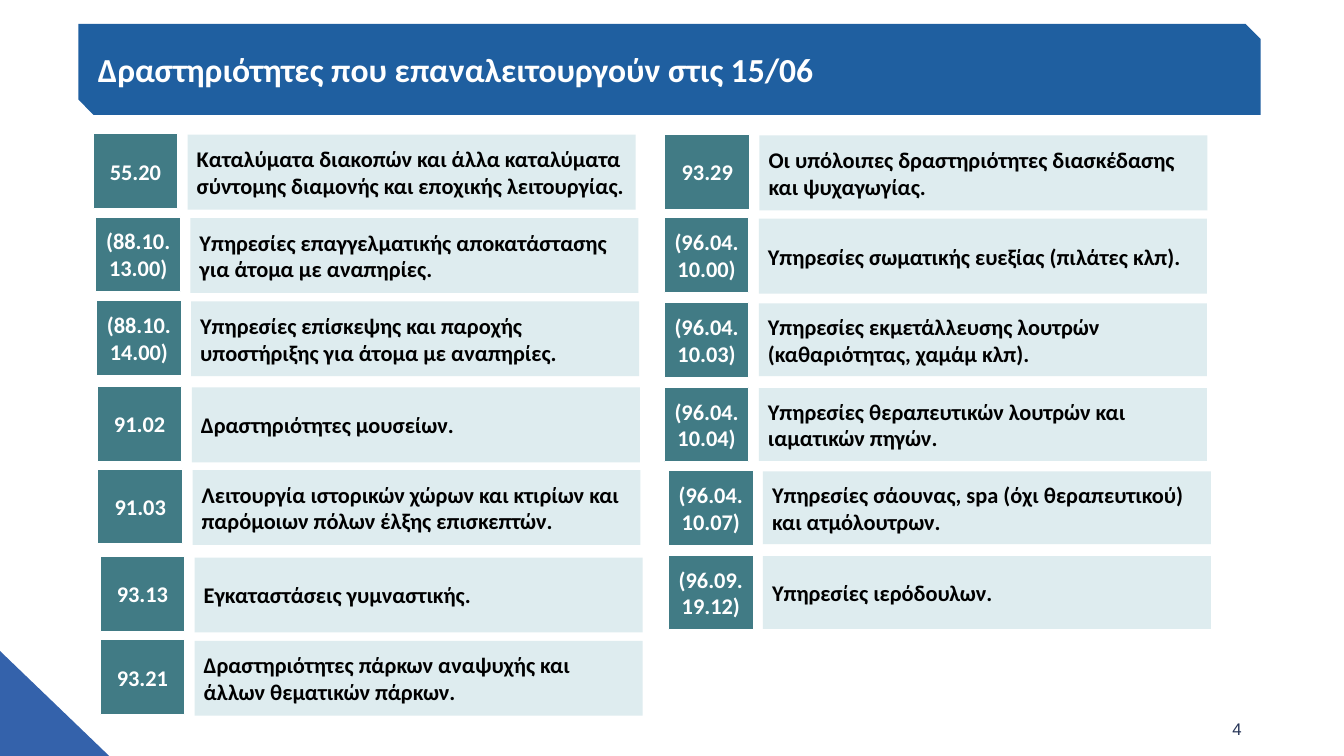
from pptx import Presentation
from pptx.dml.color import RGBColor
from pptx.enum.shapes import MSO_SHAPE as SHAPE
from pptx.enum.text import MSO_ANCHOR as ANCHOR, PP_ALIGN as ALIGN
from pptx.util import Pt


def color(value):
    return RGBColor.from_string(value)


def add_box(kind, box, fill, text="", size=16, ink="FFFFFF", align=ALIGN.LEFT, insets=(0, 0)):
    shape = slide.shapes.add_shape(kind, *[Pt(length) for length in box])
    shape.shadow.inherit = False
    shape.fill.solid()
    shape.fill.fore_color.rgb = color(fill)
    shape.line.fill.background()
    if text:
        frame = shape.text_frame
        frame.word_wrap = True
        frame.vertical_anchor = ANCHOR.MIDDLE
        frame.margin_left = frame.margin_right = Pt(insets[0])
        frame.margin_top = frame.margin_bottom = Pt(insets[1])
        paragraph = frame.paragraphs[0]
        paragraph.text = text
        paragraph.alignment = align
        paragraph.font.name = "Calibri"
        paragraph.font.size = Pt(size)
        paragraph.font.bold = True
        paragraph.font.color.rgb = color(ink)
    return shape


presentation = Presentation()
presentation.slide_width = Pt(960)
presentation.slide_height = Pt(540)
slide = presentation.slides.add_slide(presentation.slide_layouts[6])

# Corner decoration and title banner
add_box(SHAPE.RIGHT_TRIANGLE, (0, 465, 78, 75), "3462AB")
add_box(SHAPE.SNIP_2_DIAG_RECTANGLE, (56, 17, 844.5, 65), "1F5FA0",
        "Δραστηριότητες που επαναλειτουργούν στις 15/06", size=24, insets=(8.5, 1.5))

# Slide number
number_box = slide.shapes.add_textbox(Pt(678), Pt(506), Pt(216), Pt(29))
number_box.text_frame.word_wrap = True
number_box.text_frame.vertical_anchor = ANCHOR.MIDDLE
paragraph = number_box.text_frame.paragraphs[0]
paragraph.text = "4"
paragraph.alignment = ALIGN.RIGHT
paragraph.font.name = "Arial"
paragraph.font.size = Pt(12)
paragraph.font.color.rgb = color("253356")

# Activities: left and top of the code box, description height, code, description
LEFT_HEIGHT, RIGHT_HEIGHT = 53.5, 52
activities = [
    (66.5, 95.5, LEFT_HEIGHT, "55.20",
     "Καταλύματα διακοπών και άλλα καταλύματα σύντομης διαμονής και εποχικής λειτουργίας."),
    (68.5, 155, LEFT_HEIGHT, "(88.10. 13.00)",
     "Υπηρεσίες επαγγελματικής αποκατάστασης για άτομα με αναπηρίες."),
    (69, 214.5, LEFT_HEIGHT, "(88.10. 14.00)",
     "Υπηρεσίες επίσκεψης και παροχής υποστήριξης για άτομα με αναπηρίες."),
    (69.5, 276, LEFT_HEIGHT, "91.02", "Δραστηριότητες μουσείων."),
    (70, 335, LEFT_HEIGHT, "91.03",
     "Λειτουργία ιστορικών χώρων και κτιρίων και παρόμοιων πόλων έλξης επισκεπτών."),
    (71.5, 397.5, LEFT_HEIGHT, "93.13", "Εγκαταστάσεις γυμναστικής."),
    (71.5, 457, LEFT_HEIGHT, "93.21",
     "Δραστηριότητες πάρκων αναψυχής και άλλων θεματικών πάρκων."),
    (475, 96, LEFT_HEIGHT, "93.29",
     "Οι υπόλοιπες δραστηριότητες διασκέδασης και ψυχαγωγίας."),
    (474.5, 155.5, LEFT_HEIGHT, "(96.04. 10.00)",
     "Υπηρεσίες σωματικής ευεξίας (πιλάτες κλπ)."),
    (474.5, 216, RIGHT_HEIGHT, "(96.04. 10.03)",
     "Υπηρεσίες εκμετάλλευσης λουτρών (καθαριότητας, χαμάμ κλπ)."),
    (474.5, 276.5, RIGHT_HEIGHT, "(96.04. 10.04)",
     "Υπηρεσίες θεραπευτικών λουτρών και ιαματικών πηγών."),
    (477.5, 336, RIGHT_HEIGHT, "(96.04. 10.07)",
     "Υπηρεσίες σάουνας, spa (όχι θεραπευτικού) και ατμόλουτρων."),
    (477.5, 396.5, RIGHT_HEIGHT, "(96.09. 19.12)", "Υπηρεσίες ιερόδουλων."),
]
for left, top, height, code, description in activities:
    code_box = add_box(SHAPE.RECTANGLE, (left, top, 60.5, 53.5), "417B85", code,
                       align=ALIGN.CENTER, insets=(3, 6.5))
    code_box.line.color.rgb = color("FFFFFF")
    code_box.line.width = Pt(0.75)
    add_box(SHAPE.RECTANGLE, (left + 67.5, top + 0.75, 320, height), "DEECEF", description,
            ink="000000", insets=(6.5, 3))

presentation.save("out.pptx")
